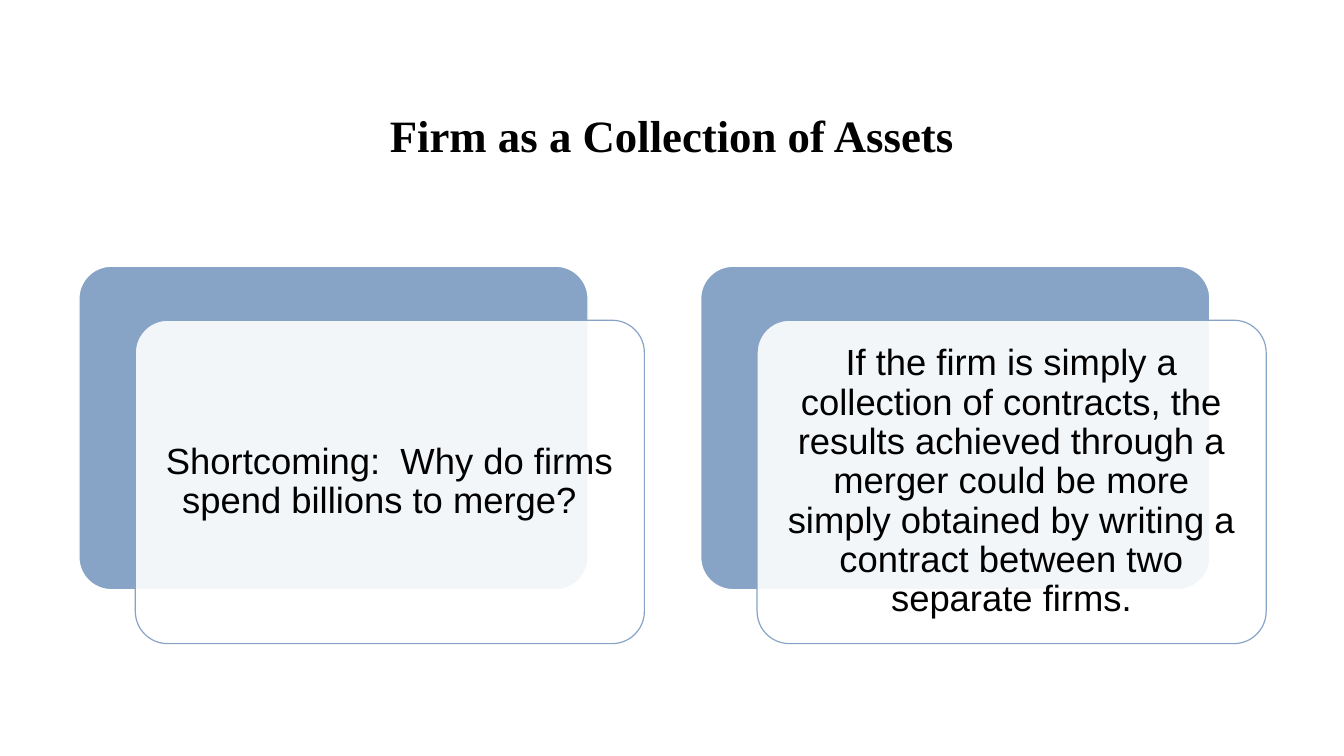
from lxml import etree
from pptx import Presentation
from pptx.dml.color import RGBColor
from pptx.enum import shapes, text
from pptx.oxml.ns import qn
from pptx.util import Cm, Pt

TITLE = "Firm as a Collection of Assets"
POINTS = [
    "Shortcoming:  Why do firms spend billions to merge?  ",
    "If the firm is simply a collection of contracts, the results achieved "
    "through a merger could be more simply obtained by writing a contract "
    "between two separate firms.",
]

BLACK = RGBColor(0x00, 0x00, 0x00)
WHITE = RGBColor(0xFF, 0xFF, 0xFF)
BLUE = RGBColor(0x87, 0xA4, 0xC7)

CARD_WIDTH, CARD_HEIGHT = 12.83, 8.15
FIRST_LEFT, TOP = 1.99, 6.71
PITCH = 15.67
OFFSET_X, OFFSET_Y = 1.42, 1.36
MARGIN = 0.28


def add_card(slide, left, top, fill, line):
    card = slide.shapes.add_shape(
        shapes.MSO_SHAPE.ROUNDED_RECTANGLE,
        Cm(left), Cm(top), Cm(CARD_WIDTH), Cm(CARD_HEIGHT))
    card.adjustments[0] = 0.1
    card.shadow.inherit = False
    card.fill.solid()
    card.fill.fore_color.rgb = fill
    card.line.color.rgb = line
    card.line.width = Pt(0.85)
    return card


def set_opacity(shape, percent):
    color = shape.fill._xPr.find(qn("a:solidFill"))[0]
    etree.SubElement(color, qn("a:alpha")).set("val", str(percent * 1000))


def write(shape, content, font_name, size, anchor, bold=False):
    """Fill the shape with one centred black paragraph."""
    frame = shape.text_frame
    frame.text = content
    frame.word_wrap = True
    frame.auto_size = text.MSO_AUTO_SIZE.NONE
    frame.vertical_anchor = anchor
    paragraph = frame.paragraphs[0]
    paragraph.alignment = text.PP_ALIGN.CENTER
    font = paragraph.runs[0].font
    font.name, font.size, font.bold = font_name, Pt(size), bold
    font.color.rgb = BLACK


def main():
    presentation = Presentation()
    presentation.slide_width, presentation.slide_height = Cm(33.87), Cm(19.05)
    slide = presentation.slides.add_slide(presentation.slide_layouts[5])

    title = slide.shapes.title
    title.left, title.top = Cm(0), Cm(1.09)
    title.width, title.height = presentation.slide_width, Cm(3.1)
    write(title, TITLE, "Times New Roman", 32, text.MSO_ANCHOR.BOTTOM, bold=True)

    for index, point in enumerate(POINTS):
        left = FIRST_LEFT + index * PITCH + 0.0
        add_card(slide, left, TOP, BLUE, WHITE)
        card = add_card(slide, left + OFFSET_X, TOP + OFFSET_Y, WHITE, BLUE)
        set_opacity(card, 90)
        write(card, point, "Arial", 26, text.MSO_ANCHOR.MIDDLE)
        frame = card.text_frame
        frame.margin_left = frame.margin_right = Cm(MARGIN)
        frame.margin_top = frame.margin_bottom = Cm(MARGIN)
        frame.paragraphs[0].line_spacing = 0.9

    presentation.save("out.pptx")


if __name__ == "__main__":
    main()
